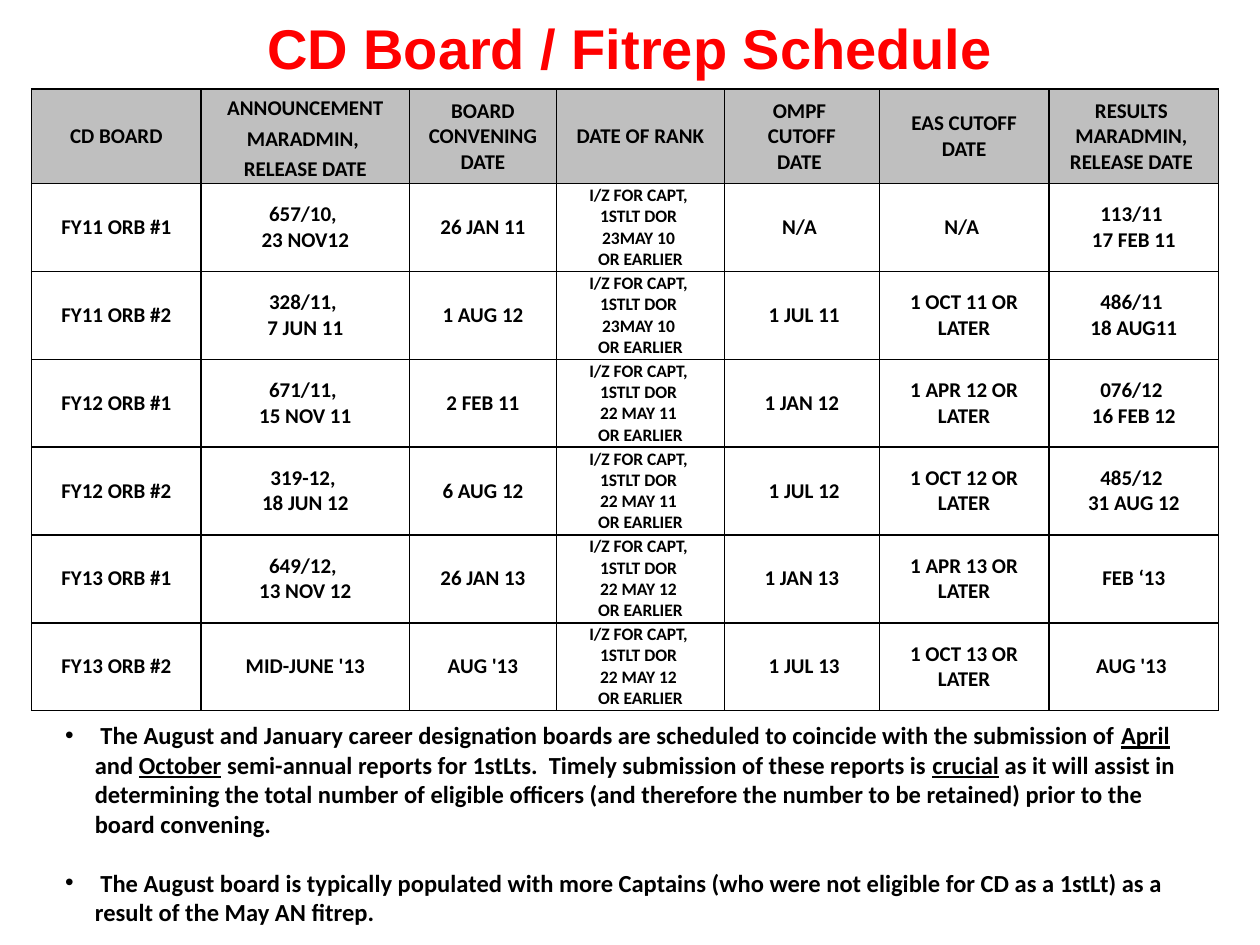
"""Build the career designation board and fitness report schedule slide."""
from dataclasses import dataclass

from lxml.etree import SubElement
from pptx import Presentation
from pptx.dml.color import RGBColor
from pptx.enum.text import MSO_ANCHOR, MSO_AUTO_SIZE, PP_ALIGN
from pptx.oxml import parse_xml
from pptx.oxml.ns import nsdecls, qn
from pptx.util import Pt


@dataclass(frozen=True)
class Theme:
    ink: RGBColor = RGBColor(0, 0, 0)
    title: RGBColor = RGBColor(0xFF, 0, 0)
    header: RGBColor = RGBColor(0xBF, 0xBF, 0xBF)
    title_font: str = "Arial"
    text_font: str = "Calibri"
    title_size: int = 32
    note_size: int = 14
    cell_size: int = 12
    rank_size: int = 10


THEME = Theme()


def style_run(run, size, color=THEME.ink, name=THEME.text_font):
    run.font.size = Pt(size)
    run.font.bold = True
    run.font.name = name
    run.font.color.rgb = color


def add_borders(cell):
    properties = cell._tc.get_or_add_tcPr()
    for position, side in enumerate(("lnL", "lnR", "lnT", "lnB")):
        properties.insert(position, parse_xml(
            f'<a:{side} {nsdecls("a")} w="{Pt(1)}"><a:solidFill>'
            f'<a:srgbClr val="{THEME.ink}"/></a:solidFill></a:{side}>'))


HEADINGS = [
    "CD BOARD",
    "ANNOUNCEMENT MARADMIN, \nRELEASE DATE",
    "BOARD\nCONVENING DATE",
    "DATE OF RANK",
    "OMPF \nCUTOFF\nDATE ",
    "EAS CUTOFF\nDATE",
    "RESULTS \nMARADMIN, \nRELEASE DATE ",
]
BOARDS = [
    ("FY11 ORB #1", "657/10, \n23 NOV12", "26 JAN 11", "23MAY 10",
     "N/A ", "N/A ", "113/11 \n17 FEB 11"),
    ("FY11 ORB #2", "328/11, \n7 JUN 11", "1 AUG 12", "23MAY 10",
     " 1 JUL 11", "1 OCT 11 OR LATER", "486/11 \n18 AUG11"),
    ("FY12 ORB #1", "671/11, \n15 NOV 11", "2 FEB 11", "22 MAY 11",
     "1 JAN 12", "1 APR 12 OR LATER", "076/12 \n16 FEB 12"),
    ("FY12 ORB #2", "319-12, \n18 JUN 12", "6 AUG 12", "22 MAY 11",
     " 1 JUL 12", "1 OCT 12 OR LATER", "485/12 \n31 AUG 12"),
    ("FY13 ORB #1", "649/12, \n13 NOV 12", "26 JAN 13", "22 MAY 12",
     "1 JAN 13", "1 APR 13 OR LATER", "FEB ‘13"),
    ("FY13 ORB #2", "MID-JUNE '13", "AUG '13", "22 MAY 12",
     " 1 JUL 13", "1 OCT 13 OR LATER", "AUG '13 "),
]
COLUMN_WIDTHS = [97, 119, 84, 96, 88.5, 97, 97]
HEADER_HEIGHT, BOARD_HEIGHT = 54, 50.2
ANNOUNCEMENT, RANK = 1, 3
UNDERLINED = ("April", "October", "crucial")
NOTES = [
    (" The August and January career designation boards are scheduled to coincide "
     "with the submission of ", "April", " and ", "October",
     " semi-annual reports for 1stLts.  Timely submission of these reports is ",
     "crucial",
     " as it will assist in determining the total number of eligible officers "
     "(and therefore the number to be retained) prior to the board convening."),
    (" The August board is typically populated with more Captains (who were not "
     "eligible for CD as a 1stLt) as a result of the May AN fitrep.",),
]

presentation = Presentation()
presentation.slide_width, presentation.slide_height = Pt(720), Pt(540)
slide = presentation.slides.add_slide(presentation.slide_layouts[1])

heading = slide.shapes.title
heading.left, heading.top, heading.width, heading.height = Pt(93), Pt(6), Pt(534), Pt(42)
heading.text_frame.text = "CD Board / Fitrep Schedule"
heading.text_frame.auto_size = MSO_AUTO_SIZE.NONE
heading.text_frame.vertical_anchor = MSO_ANCHOR.MIDDLE
heading_line = heading.text_frame.paragraphs[0]
heading_line.alignment = PP_ALIGN.CENTER
heading_run = heading_line.runs[0]
style_run(heading_run, THEME.title_size, THEME.title, THEME.title_font)
effects = parse_xml(f'<a:effectLst {nsdecls("a")}/>')
shadow = SubElement(effects, qn("a:outerShdw"), dist=str(Pt(3)), dir="2700000")
SubElement(shadow, qn("a:srgbClr"), val=str(THEME.ink))
heading_run._r.rPr.find(qn("a:solidFill")).addnext(effects)

schedule = slide.shapes.add_table(
    len(BOARDS) + 1, len(HEADINGS), Pt(18), Pt(51), Pt(sum(COLUMN_WIDTHS)),
    Pt(HEADER_HEIGHT + BOARD_HEIGHT * len(BOARDS))).table
schedule.horz_banding = False
for column, width in zip(schedule.columns, COLUMN_WIDTHS):
    column.width = Pt(width)

for row_index, entries in enumerate([HEADINGS, *BOARDS]):
    is_header = row_index == 0
    schedule.rows[row_index].height = Pt(HEADER_HEIGHT if is_header else BOARD_HEIGHT)
    for column_index, entry in enumerate(entries):
        is_rank = column_index == RANK and not is_header
        cell = schedule.cell(row_index, column_index)
        cell.text_frame.text = (
            f"I/Z FOR CAPT, \n1STLT DOR \n{entry} \nOR EARLIER" if is_rank else entry)
        cell.vertical_anchor = MSO_ANCHOR.MIDDLE
        tight = is_header and column_index <= ANNOUNCEMENT
        cell.margin_left = cell.margin_right = Pt(0 if tight else 1.4)
        cell.margin_top = cell.margin_bottom = Pt(0 if tight else 0.7)
        if is_header:
            cell.fill.solid()
            cell.fill.fore_color.rgb = THEME.header
        else:
            cell.fill.background()
        add_borders(cell)
        for line in cell.text_frame.paragraphs:
            line.alignment = PP_ALIGN.CENTER
            if is_header and column_index == ANNOUNCEMENT:
                line.line_spacing = 1.2
            style_run(line.runs[0], THEME.rank_size if is_rank else THEME.cell_size)

remarks = slide.placeholders[1]
remarks.left, remarks.top, remarks.width, remarks.height = Pt(30), Pt(408), Pt(654), Pt(126)
remarks.text_frame.auto_size = MSO_AUTO_SIZE.NONE
for note_index, note in enumerate(NOTES):
    remark = (remarks.text_frame.add_paragraph() if note_index
              else remarks.text_frame.paragraphs[0])
    remark.space_before = Pt(17 * note_index)
    indents = remark._p.get_or_add_pPr()
    indents.set("marL", str(Pt(17)))
    indents.set("indent", str(Pt(-17)))
    for phrase in note:
        run = remark.add_run()
        run.text = phrase
        style_run(run, THEME.note_size)
        run.font.underline = phrase in UNDERLINED

presentation.save("out.pptx")
